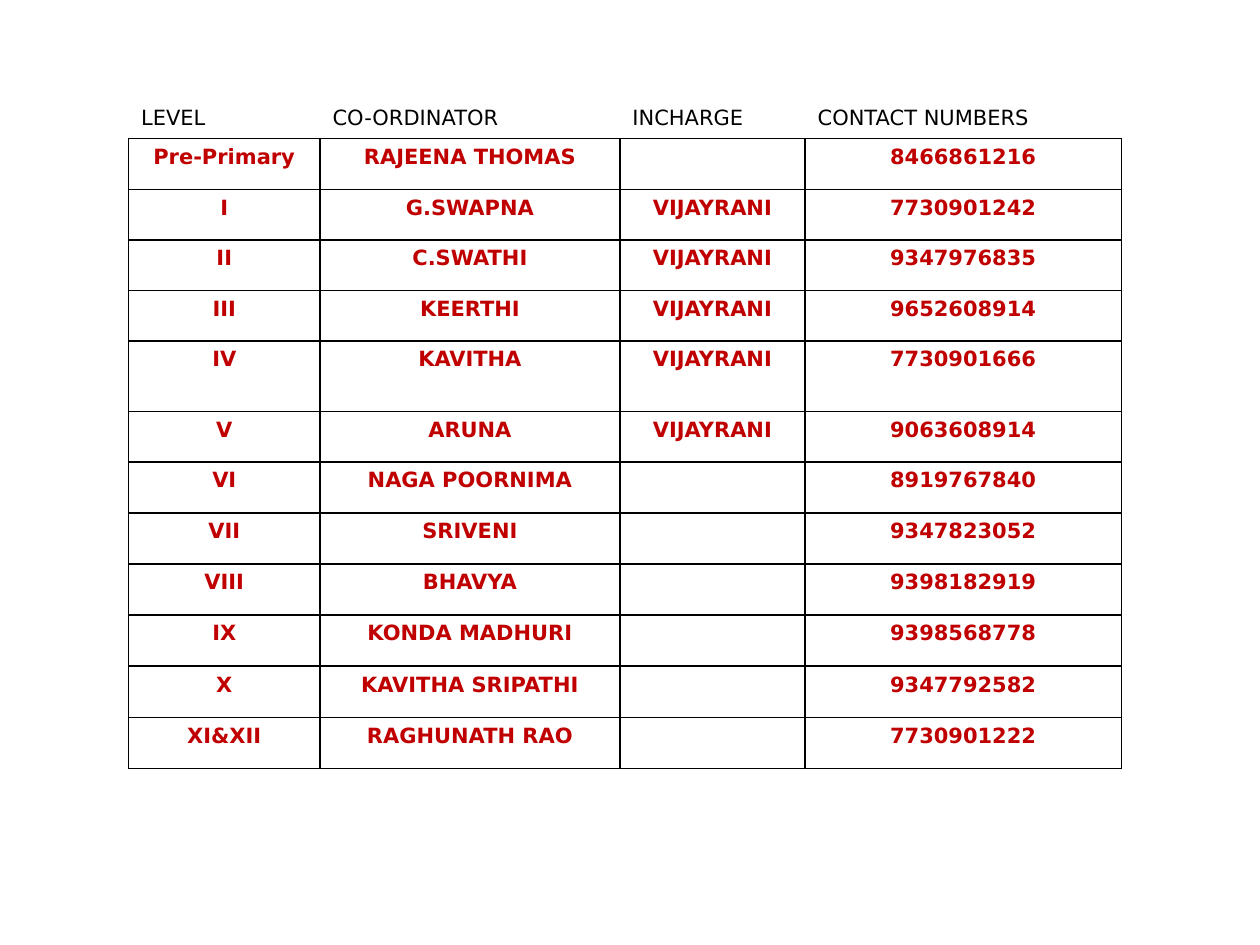
from lxml import etree
from pptx import Presentation
from pptx.dml.color import RGBColor
from pptx.enum.text import MSO_ANCHOR, PP_ALIGN
from pptx.oxml.ns import qn
from pptx.util import Inches, Pt

CENTER, LEFT, TOP = PP_ALIGN.CENTER, PP_ALIGN.LEFT, MSO_ANCHOR.TOP
COLORS = {"page": "FFFFFF", "grid": "000000", "header": "000000", "entry": "C00000"}
FONT = "DejaVu Sans"

COLUMN_WIDTHS = [1.52, 2.38, 1.47, 2.51]
HEADER_HEIGHT, ROW_HEIGHT, TALL_HEIGHT = 0.31, 0.4, 0.56
TALL_LEVEL = "IV"

ROWS = [
    ("LEVEL", "CO-ORDINATOR", "INCHARGE", "CONTACT NUMBERS"),
    ("Pre-Primary", "RAJEENA THOMAS", "", "8466861216"),
    ("I", "G.SWAPNA", "VIJAYRANI", "7730901242"),
    ("II", "C.SWATHI", "VIJAYRANI", "9347976835"),
    ("III", "KEERTHI", "VIJAYRANI", "9652608914"),
    ("IV", "KAVITHA", "VIJAYRANI", "7730901666"),
    ("V", "ARUNA", "VIJAYRANI", "9063608914"),
    ("VI", "NAGA POORNIMA", "", "8919767840"),
    ("VII", "SRIVENI", "", "9347823052"),
    ("VIII", "BHAVYA", "", "9398182919"),
    ("IX", "KONDA MADHURI", "", "9398568778"),
    ("X", "KAVITHA SRIPATHI", "", "9347792582"),
    ("XI&XII", "RAGHUNATH RAO", "", "7730901222"),
]


def add_borders(cell, side_colors):
    """Draw 1 pt cell borders; side_colors follows left, right, top, bottom."""
    properties = cell._tc.get_or_add_tcPr()
    for side, color in zip("LRTB", side_colors):
        line = etree.SubElement(properties, qn(f"a:ln{side}"), w=str(Pt(1)))
        fill = etree.SubElement(line, qn("a:solidFill"))
        etree.SubElement(fill, qn("a:srgbClr"), val=color)


deck = Presentation()
deck.slide_width, deck.slide_height = Inches(10), Inches(7.5)
page = deck.slides.add_slide(deck.slide_layouts[6])

heights = [HEADER_HEIGHT] + [
    TALL_HEIGHT if row[0] == TALL_LEVEL else ROW_HEIGHT for row in ROWS[1:]
]
table = page.shapes.add_table(
    len(ROWS), len(COLUMN_WIDTHS), Inches(1.02), Inches(0.79),
    Inches(sum(COLUMN_WIDTHS)), Inches(sum(heights)),
).table
table.first_row = False
table.horz_banding = False
for column, width in zip(table.columns, COLUMN_WIDTHS):
    column.width = Inches(width)

for row_index, (row, height) in enumerate(zip(ROWS, heights)):
    table.rows[row_index].height = Inches(height)
    is_header = row_index == 0
    outline = COLORS["page" if is_header else "grid"]
    for column_index, text in enumerate(row):
        cell = table.cell(row_index, column_index)
        add_borders(cell, [outline] * 3 + [COLORS["grid"]])
        cell.fill.background()
        cell.vertical_anchor = TOP
        if not text:
            continue
        para = cell.text_frame.paragraphs[0]
        para.alignment = LEFT if is_header else CENTER
        span = para.add_run()
        span.text = text
        span.font.name = FONT
        span.font.size = Pt(12)
        span.font.bold = not is_header
        span.font.color.rgb = RGBColor.from_string(
            COLORS["header" if is_header else "entry"])

deck.save("out.pptx")
